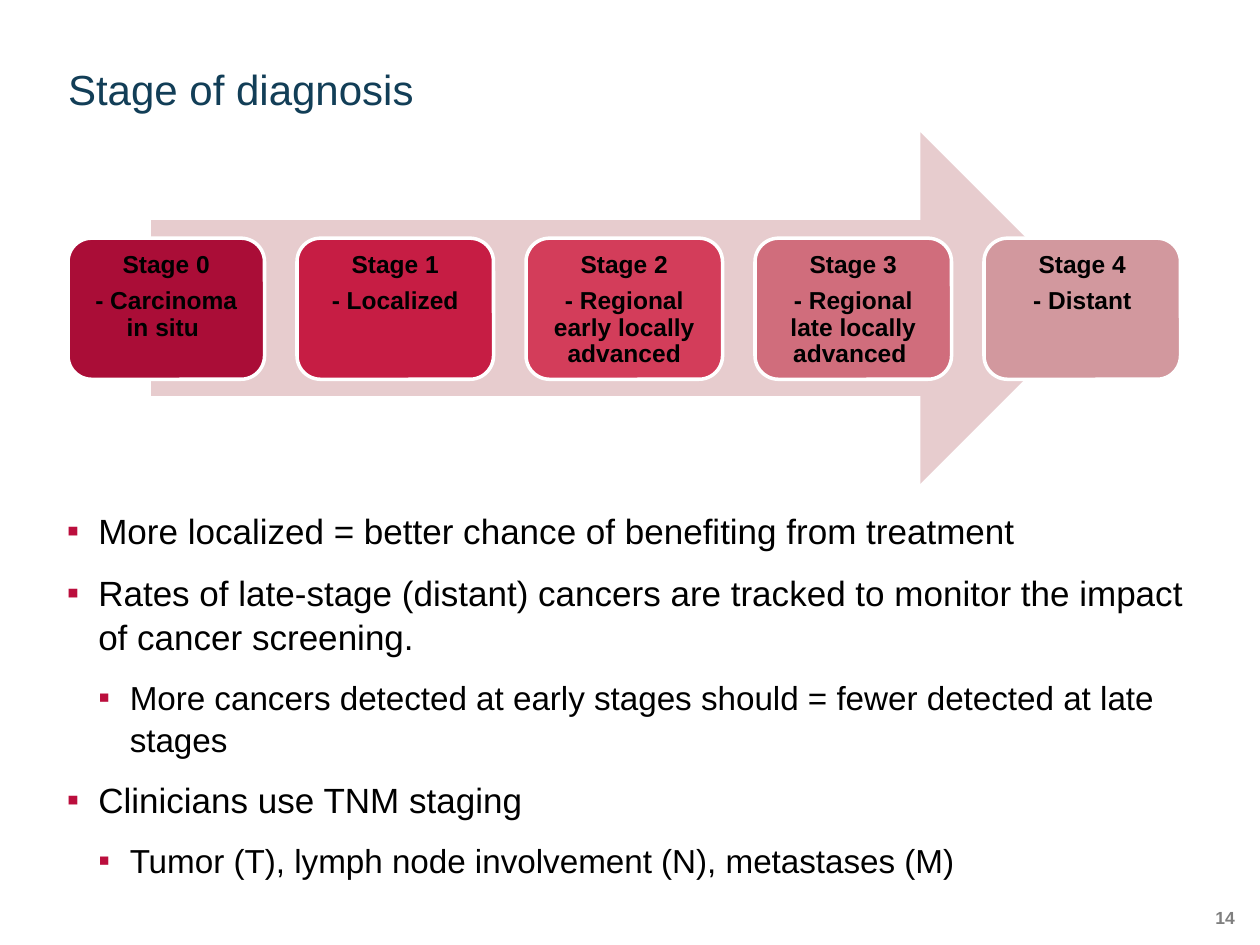
from dataclasses import dataclass

from lxml import etree
from pptx import Presentation
from pptx.dml.color import RGBColor
from pptx.enum import shapes, text
from pptx.oxml import ns
from pptx.util import Inches, Pt


@dataclass(frozen=True)
class Theme:
    font: str = "Arial"
    title_color: str = "123E57"
    text_color: str = "000000"
    bullet_color: str = "BB0E3D"
    number_color: str = "7F7F7F"
    arrow_color: str = "E7CCCE"
    outline_color: str = "FFFFFF"
    title_size: int = 24
    bullet_sizes: tuple = (20, 19)
    stage_size: int = 14
    number_size: int = 10


STAGES = [
    ("Stage 0", "- Carcinoma in situ ", "AA0D37"),
    ("Stage 1", "- Localized", "C61D44"),
    ("Stage 2", "- Regional early locally advanced", "D33D5A"),
    ("Stage 3", "- Regional late locally advanced ", "D06D7C"),
    ("Stage 4", "- Distant", "D2989E"),
]
BULLETS = [
    (0, "More localized = better chance of benefiting from treatment"),
    (0, "Rates of late-stage (distant) cancers are tracked to monitor the "
        "impact of cancer screening."),
    (1, "More cancers detected at early stages should = fewer detected at "
        "late stages"),
    (0, "Clinicians use TNM staging"),
    (1, "Tumor (T), lymph node involvement (N), metastases (M)"),
]


class SlideBuilder:
    def __init__(self, slide, theme):
        self.slide = slide
        self.theme = theme

    def place(self, shape, left, top, width, height):
        shape.left, shape.top = Inches(left), Inches(top)
        shape.width, shape.height = Inches(width), Inches(height)

    def prepare_frame(self, shape, anchor, margin=0):
        frame = shape.text_frame
        frame.word_wrap = True
        frame.auto_size = text.MSO_AUTO_SIZE.NONE
        frame.vertical_anchor = anchor
        frame.margin_left = frame.margin_right = Inches(margin)
        frame.margin_top = frame.margin_bottom = Inches(margin)
        return frame

    def format_paragraph(self, paragraph, size, color, bold=False,
                         align=text.PP_ALIGN.LEFT, spacing=1.0, after=0):
        paragraph.alignment = align
        paragraph.line_spacing = spacing
        paragraph.space_before = Pt(0)
        paragraph.space_after = Pt(after)
        for run in paragraph.runs:
            run.font.name = self.theme.font
            run.font.size = Pt(size)
            run.font.bold = bold
            run.font.color.rgb = RGBColor.from_string(color)

    def add_bullet(self, paragraph, level):
        """Give the paragraph a coloured square and a hanging indent."""
        paragraph.level = level
        properties = paragraph._p.get_or_add_pPr()
        properties.set("marL", str(Inches(0.25 * (level + 1))))
        properties.set("indent", str(Inches(-0.25)))
        color = etree.SubElement(properties, ns.qn("a:buClr"))
        etree.SubElement(color, ns.qn("a:srgbClr"), val=self.theme.bullet_color)
        etree.SubElement(properties, ns.qn("a:buFont"), typeface=self.theme.font)
        etree.SubElement(properties, ns.qn("a:buChar"), char="▪")

    def title(self, wording, *box):
        shape = self.slide.shapes.title
        self.place(shape, *box)
        frame = self.prepare_frame(shape, text.MSO_ANCHOR.BOTTOM)
        frame.text = wording
        self.format_paragraph(frame.paragraphs[0], self.theme.title_size,
                              self.theme.title_color, spacing=0.9)

    def bullets(self, items, *box):
        shape = self.slide.placeholders[1]
        self.place(shape, *box)
        frame = self.prepare_frame(shape, text.MSO_ANCHOR.TOP)
        frame.text = "\n".join(wording for _, wording in items)
        for paragraph, (level, _) in zip(frame.paragraphs, items):
            self.add_bullet(paragraph, level)
            self.format_paragraph(paragraph, self.theme.bullet_sizes[level],
                                  self.theme.text_color, spacing=1.05, after=10)

    def filled_shape(self, kind, color, *box):
        shape = self.slide.shapes.add_shape(kind, *map(Inches, box))
        shape.shadow.inherit = False
        shape.fill.solid()
        shape.fill.fore_color.rgb = RGBColor.from_string(color)
        shape.line.fill.background()
        return shape

    def arrow(self, *box):
        self.filled_shape(shapes.MSO_SHAPE.RIGHT_ARROW, self.theme.arrow_color, *box)

    def stage(self, name, description, color, *box):
        shape = self.filled_shape(shapes.MSO_SHAPE.ROUNDED_RECTANGLE, color, *box)
        shape.line.color.rgb = RGBColor.from_string(self.theme.outline_color)
        shape.line.width = Pt(2)
        frame = self.prepare_frame(shape, text.MSO_ANCHOR.TOP, margin=0.06)
        frame.text = f"{name}\n{description}"
        for paragraph in frame.paragraphs:
            self.format_paragraph(paragraph, self.theme.stage_size,
                                  self.theme.text_color, bold=True, spacing=0.9,
                                  align=text.PP_ALIGN.CENTER, after=5.5)

    def slide_number(self, number, *box):
        shape = self.slide.shapes.add_textbox(*map(Inches, box))
        frame = self.prepare_frame(shape, text.MSO_ANCHOR.TOP)
        frame.text = str(number)
        self.format_paragraph(frame.paragraphs[0], self.theme.number_size,
                              self.theme.number_color, bold=True,
                              align=text.PP_ALIGN.RIGHT)


def main():
    presentation = Presentation()
    presentation.slide_width, presentation.slide_height = Inches(10), Inches(7.5)
    slide = presentation.slides.add_slide(presentation.slide_layouts[1])
    builder = SlideBuilder(slide, Theme())

    builder.title("Stage of diagnosis", 0.54, 0.45, 8.93, 0.46)
    builder.bullets(BULLETS, 0.53, 4.03, 8.93, 2.78)
    builder.arrow(1.2, 1.05, 7.5, 2.79)

    first_left, last_left = 0.54, 7.81
    pitch = (last_left - first_left) / (len(STAGES) - 1)
    for index, stage in enumerate(STAGES):
        builder.stage(*stage, first_left + index * pitch, 1.89, 1.56, 1.12)

    builder.slide_number(14, 9.46, 7.2, 0.34, 0.2)
    presentation.save("out.pptx")


if __name__ == "__main__":
    main()
